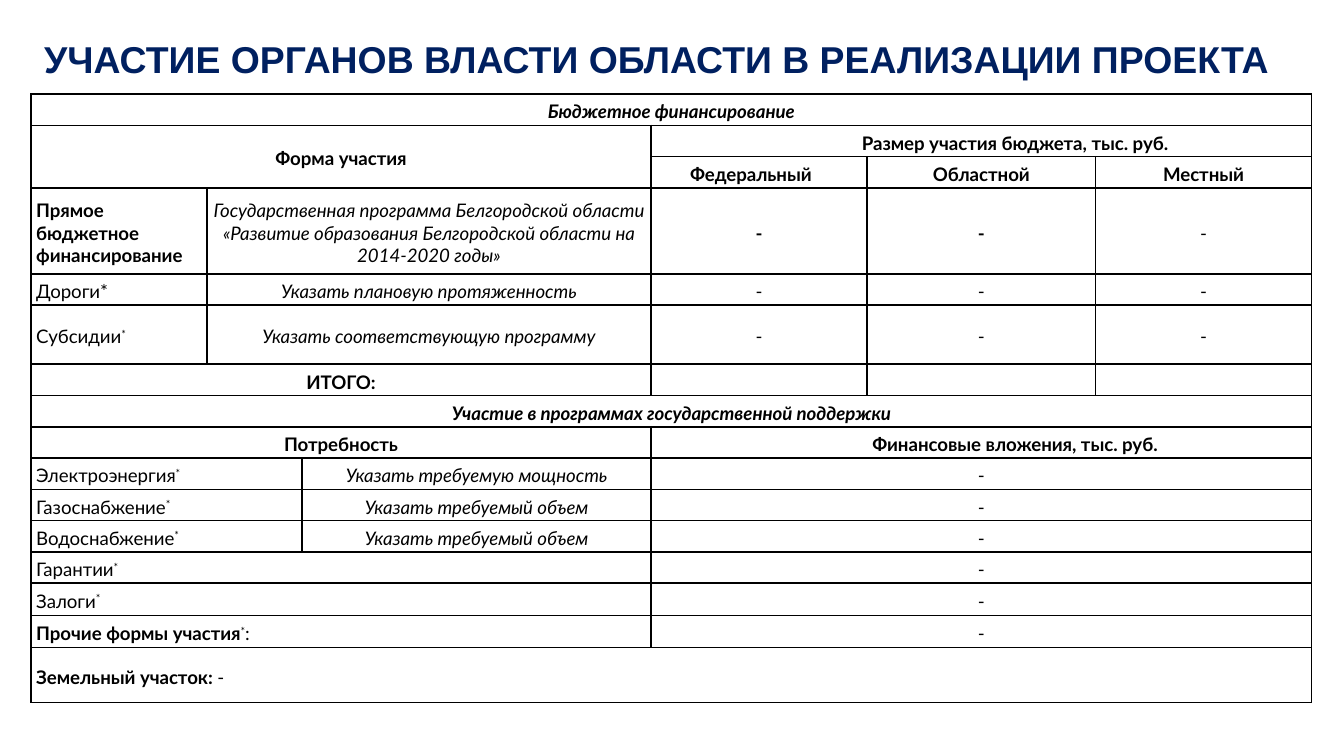
from lxml import etree
from pptx import Presentation
from pptx.dml.color import RGBColor
from pptx.enum.text import MSO_ANCHOR, PP_ALIGN
from pptx.oxml.ns import qn
from pptx.util import Inches, Pt

MIDDLE = MSO_ANCHOR.MIDDLE
LEFT, CENTER = PP_ALIGN.LEFT, PP_ALIGN.CENTER
BLACK, NAVY = "000000", "002060"
FORMATS = {
    "plain": {},
    "bold": {"bold": True},
    "italic": {"italic": True},
    "heading": {"bold": True, "italic": True},
    "note": {},
}
CELL_MARGINS = {
    "margin_left": Inches(0.04),
    "margin_right": Inches(0.04),
    "margin_top": Inches(0.03),
    "margin_bottom": Inches(0),
}
STAR = ("*", "note")
COLUMN_WIDTHS = [1.31, 0.71, 2.6, 1.61, 1.7, 1.61]
ROW_COUNT = 16
SPECIAL_HEIGHTS = {3: 0.64, 5: 0.44, 13: 0.24, 14: 0.24, 15: 0.41}


def color(value):
    return RGBColor.from_string(value)


def add_run(paragraph, text, size, font, shade, style):
    run = paragraph.add_run()
    run.text = text
    values = {"size": Pt(size), "name": font, "bold": False, "italic": False}
    for name, value in {**values, **FORMATS[style]}.items():
        setattr(run.font, name, value)
    run.font.color.rgb = color(shade)
    if style == "note":
        run.font._element.set("baseline", "30000")


def add_title(slide, left, top, width, height):
    title = slide.shapes.add_textbox(Inches(left), Inches(top), Inches(width), Inches(height))
    frame = title.text_frame
    frame.word_wrap = True
    frame.vertical_anchor = MIDDLE
    text = "УЧАСТИЕ ОРГАНОВ ВЛАСТИ ОБЛАСТИ В РЕАЛИЗАЦИИ ПРОЕКТА"
    add_run(frame.paragraphs[0], text, 20, "Arial", NAVY, "bold")


def format_cell(cell):
    for name, value in CELL_MARGINS.items():
        setattr(cell, name, value)
    cell.vertical_anchor = MIDDLE
    cell.fill.background()
    properties = cell._tc.get_or_add_tcPr()
    for index, side in enumerate(("a:lnL", "a:lnR", "a:lnT", "a:lnB")):
        border = etree.Element(qn(side), w=str(Pt(1)))
        fill = etree.SubElement(border, qn("a:solidFill"))
        etree.SubElement(fill, qn("a:srgbClr"), val=BLACK)
        properties.insert(index, border)
    etree.SubElement(cell.text_frame.paragraphs[0]._p, qn("a:endParaRPr"), sz="1000")


def fill_cell(table, row, column, runs, columns=1, rows=1, align=CENTER, indent=0):
    cell = table.cell(row, column)
    if columns > 1 or rows > 1:
        cell.merge(table.cell(row + rows - 1, column + columns - 1))
    paragraph = cell.text_frame.paragraphs[0]
    paragraph.alignment = align
    if indent:
        paragraph._p.get_or_add_pPr().set("marL", str(Inches(indent)))
    for text, style in runs:
        add_run(paragraph, text, 10, "Lato", BLACK, style)


def fill_budget(table):
    fill_cell(table, 0, 0, [("Бюджетное финансирование", "heading")], columns=6)
    fill_cell(table, 1, 0, [("Форма участия", "bold")], columns=3, rows=2)
    fill_cell(table, 1, 3, [("Размер участия бюджета, тыс. руб.", "bold")], columns=3, indent=0.5)
    fill_cell(table, 2, 3, [("Федеральный", "bold")], align=LEFT, indent=0.25)
    fill_cell(table, 2, 4, [("Областной", "bold")])
    fill_cell(table, 2, 5, [("Местный", "bold")])
    program = (
        "Государственная программа Белгородской области "
        "«Развитие образования Белгородской области на 2014-2020 годы»"
    )
    forms = [
        ([("Прямое бюджетное финансирование", "bold")], program, ("bold", "bold", "plain")),
        ([("Дороги*", "plain")], "Указать плановую протяженность", ("plain",) * 3),
        ([("Субсидии", "plain"), STAR], "Указать соответствующую программу", ("plain",) * 3),
    ]
    for row, (form, detail, amount_styles) in enumerate(forms, 3):
        fill_cell(table, row, 0, form, align=LEFT)
        fill_cell(table, row, 1, [(detail, "italic")], columns=2)
        for column, style in enumerate(amount_styles, 3):
            fill_cell(table, row, column, [("-", style)])
    fill_cell(table, 6, 0, [("ИТОГО:", "bold")], columns=3)


def fill_support(table):
    fill_cell(table, 7, 0, [("Участие в программах государственной поддержки", "heading")], columns=6)
    fill_cell(table, 8, 0, [("Потребность", "bold")], columns=3)
    fill_cell(table, 8, 3, [("Финансовые вложения, тыс. руб.", "bold")], columns=3, indent=0.5)
    needs = [
        ([("Электроэнергия", "plain"), STAR], "Указать требуемую мощность"),
        ([("Газоснабжение", "plain"), STAR], "Указать требуемый объем"),
        ([("Водоснабжение", "plain"), STAR], "Указать требуемый объем"),
        ([("Гарантии", "plain"), STAR], None),
        ([("Залоги", "plain"), STAR], None),
        ([("Прочие формы участия", "bold"), STAR, (":", "plain")], None),
    ]
    for row, (need, detail) in enumerate(needs, 9):
        fill_cell(table, row, 0, need, columns=2 if detail else 3, align=LEFT)
        if detail:
            fill_cell(table, row, 2, [(detail, "italic")])
        fill_cell(table, row, 3, [("-", "plain")], columns=3)
    land = [("Земельный участок: ", "bold"), ("-", "plain")]
    fill_cell(table, 15, 0, land, columns=6, align=LEFT)


def add_participation(slide, left, top, width, height):
    frame = slide.shapes.add_table(
        ROW_COUNT, len(COLUMN_WIDTHS), Inches(left), Inches(top), Inches(width), Inches(height)
    )
    table = frame.table
    for name in ("first_row", "horz_banding"):
        setattr(table, name, False)
    for column, share in zip(table.columns, COLUMN_WIDTHS):
        column.width = Inches(width * share / sum(COLUMN_WIDTHS))
    regular = (height - sum(SPECIAL_HEIGHTS.values())) / (ROW_COUNT - len(SPECIAL_HEIGHTS))
    for index, row in enumerate(table.rows):
        row.height = Inches(SPECIAL_HEIGHTS.get(index, regular))
    for cell in table.iter_cells():
        format_cell(cell)
    fill_budget(table)
    fill_support(table)


def main():
    deck = Presentation()
    deck.slide_width = Inches(10)
    deck.slide_height = deck.slide_width * 9 // 16
    slide = deck.slides.add_slide(deck.slide_layouts[6])
    add_participation(slide, 0.23, 0.7, 9.53, 4.53)
    add_title(slide, 0.23, 0.16, 9.61, 0.55)
    deck.save("out.pptx")


if __name__ == "__main__":
    main()
